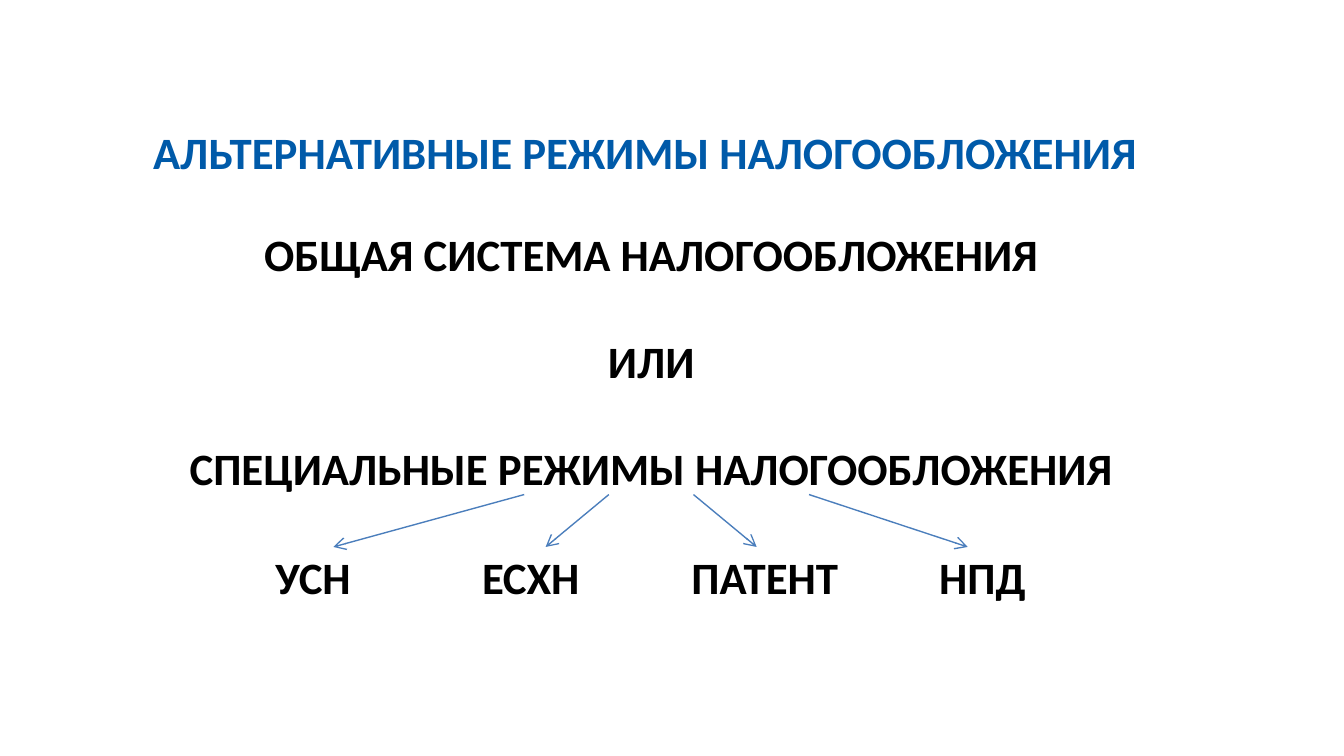
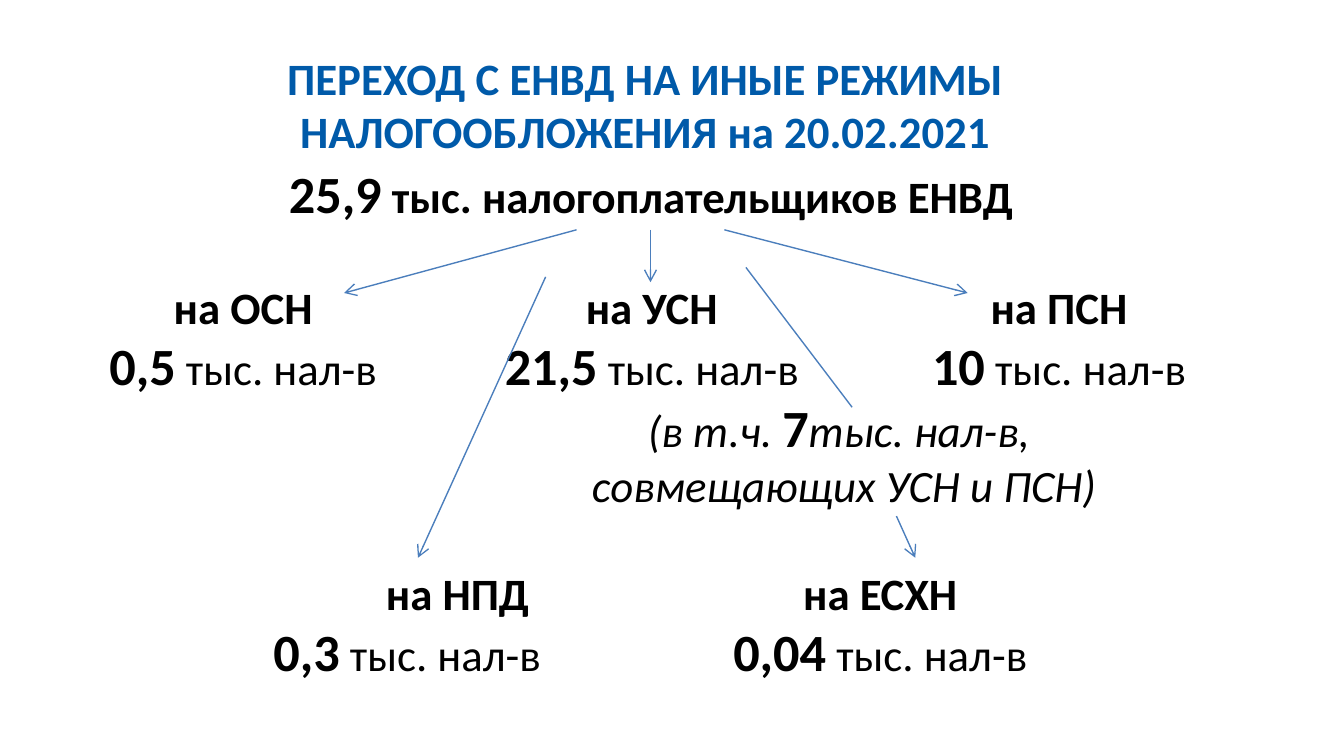
"""Builds two slides on alternative tax regimes and the move away from ЕНВД."""
from lxml.etree import SubElement
from pptx import Presentation
from pptx.dml.color import RGBColor
from pptx.enum.shapes import MSO_CONNECTOR
from pptx.enum.text import MSO_ANCHOR, PP_ALIGN
from pptx.oxml.ns import qn
from pptx.util import Inches, Pt

COLORS = {"title": "005AA9", "text": "000000", "arrow": "4B7EBC"}
FONT = "Calibri"
STYLES = {
    "bold": (24, True, False),
    "number": (28, True, False),
    "plain": (24, False, False),
    "italic": (24, False, True),
}
BODY_LEFT, BODY_WIDTH, TITLE_WIDTH = 0.67, 8.35, 8.26
LABEL_WIDTH, LABEL_HEIGHT = 1.7, 0.5
GROUP_WIDTH, GROUP_HEIGHT = 2.6, 0.96
UNIT = " тыс. нал-в"

CHOICE_TITLE = "АЛЬТЕРНАТИВНЫЕ РЕЖИМЫ НАЛОГООБЛОЖЕНИЯ"
CHOICE_LINES = [
    "ОБЩАЯ СИСТЕМА НАЛОГООБЛОЖЕНИЯ",
    "ИЛИ",
    "СПЕЦИАЛЬНЫЕ РЕЖИМЫ НАЛОГООБЛОЖЕНИЯ",
]
REGIME_TOP = 4.04
REGIMES = [("УСН", 2.33), ("ЕСХН", 3.95), ("ПАТЕНТ", 5.69), ("НПД", 7.31)]
REGIME_ARROWS = [(3.9, 2.48), (4.53, 4.06), (5.16, 5.63), (6.02, 7.2)]

MOVE_TITLE = "ПЕРЕХОД С ЕНВД НА ИНЫЕ РЕЖИМЫ НАЛОГООБЛОЖЕНИЯ на 20.02.2021"
MOVE_TOTAL = [[("25,9", "number"), (" тыс. налогоплательщиков ЕНВД", "bold")]]
MOVE_NOTE = [
    [("(в т.ч. ", "italic"), ("7", "number"), ("тыс. нал-в, ", "italic")],
    [("совмещающих УСН и ПСН)", "italic")],
]
MOVE_GROUPS = [
    ("на ОСН", "0,5", 1.86, 2.03, -0.1),
    ("на УСН", "21,5", 4.93, 2.03, -0.16),
    ("на ПСН", "10", 7.88, 2.03, 0),
    ("на НПД", "0,3", 3.03, 4.16, 0.75),
    ("на ЕСХН", "0,04", 6.55, 4.16, 0),
]
MOVE_ARROWS = [
    (4.29, 1.71, 2.56, 2.18, True),
    (5.39, 1.71, 7.2, 2.18, True),
    (4.84, 1.71, 4.84, 2.1, True),
    (4.06, 2.06, 3.11, 4.15, True),
    (5.55, 1.99, 6.34, 3.03, False),
    (6.67, 3.84, 6.81, 4.15, True),
]


def add_text(page, left, top, width, height, paragraphs, color="text",
             anchor=MSO_ANCHOR.TOP, gap=0, indent=0):
    box = page.shapes.add_textbox(Inches(left), Inches(top), Inches(width), Inches(height))
    frame = box.text_frame
    frame.word_wrap = True
    frame.vertical_anchor = anchor
    for index, runs in enumerate(paragraphs):
        para = frame.add_paragraph() if index else frame.paragraphs[0]
        para.alignment = PP_ALIGN.CENTER
        if index:
            para.space_before = Pt(gap)
        elif indent:
            side = "marL" if indent > 0 else "marR"
            para._p.get_or_add_pPr().set(side, str(Inches(abs(indent))))
        for text, style in runs:
            span = para.add_run()
            span.text = text
            span.font.name = FONT
            size, span.font.bold, span.font.italic = STYLES[style]
            span.font.size = Pt(size)
            span.font.color.rgb = RGBColor.from_string(COLORS[color])


def add_title(page, text, top, height):
    add_text(page, BODY_LEFT, top, TITLE_WIDTH, height, [[(text, "bold")]],
             color="title", anchor=MSO_ANCHOR.MIDDLE)


def add_arrow(page, x1, y1, x2, y2, head=True):
    arrow = page.shapes.add_connector(
        MSO_CONNECTOR.STRAIGHT, Inches(x1), Inches(y1), Inches(x2), Inches(y2))
    arrow.line.color.rgb = RGBColor.from_string(COLORS["arrow"])
    arrow.line.width = Pt(0.75)
    if head:
        SubElement(arrow.line._get_or_add_ln(), qn("a:tailEnd"), type="arrow")
    SubElement(arrow._element.spPr, qn("a:effectLst"))


def build_choice(page):
    add_title(page, CHOICE_TITLE, 0.61, 1.03)
    add_text(page, BODY_LEFT, 1.64, BODY_WIDTH, 2.4,
             [[(text, "bold")] for text in CHOICE_LINES], gap=28.5)
    for name, center in REGIMES:
        add_text(page, center - LABEL_WIDTH / 2, REGIME_TOP, LABEL_WIDTH, LABEL_HEIGHT,
                 [[(name, "bold")]])
    for start, end in REGIME_ARROWS:
        add_arrow(page, start, 3.68, end, 4.07)


def build_move(page):
    add_title(page, MOVE_TITLE, 0.39, 0.77)
    add_text(page, BODY_LEFT, 1.15, BODY_WIDTH, 0.57, MOVE_TOTAL)
    for name, value, center, top, indent in MOVE_GROUPS:
        add_text(page, center - GROUP_WIDTH / 2, top, GROUP_WIDTH, GROUP_HEIGHT,
                 [[(name, "bold")], [(value, "number"), (UNIT, "plain")]], indent=indent)
    add_text(page, 4.18, 2.89, 4.2, 0.98, MOVE_NOTE)
    for arrow in MOVE_ARROWS:
        add_arrow(page, *arrow)


def main():
    deck = Presentation()
    deck.slide_width = Inches(10)
    deck.slide_height = deck.slide_width * 9 // 16
    for build in (build_choice, build_move):
        build(deck.slides.add_slide(deck.slide_layouts[6]))
    deck.save("out.pptx")


if __name__ == "__main__":
    main()
